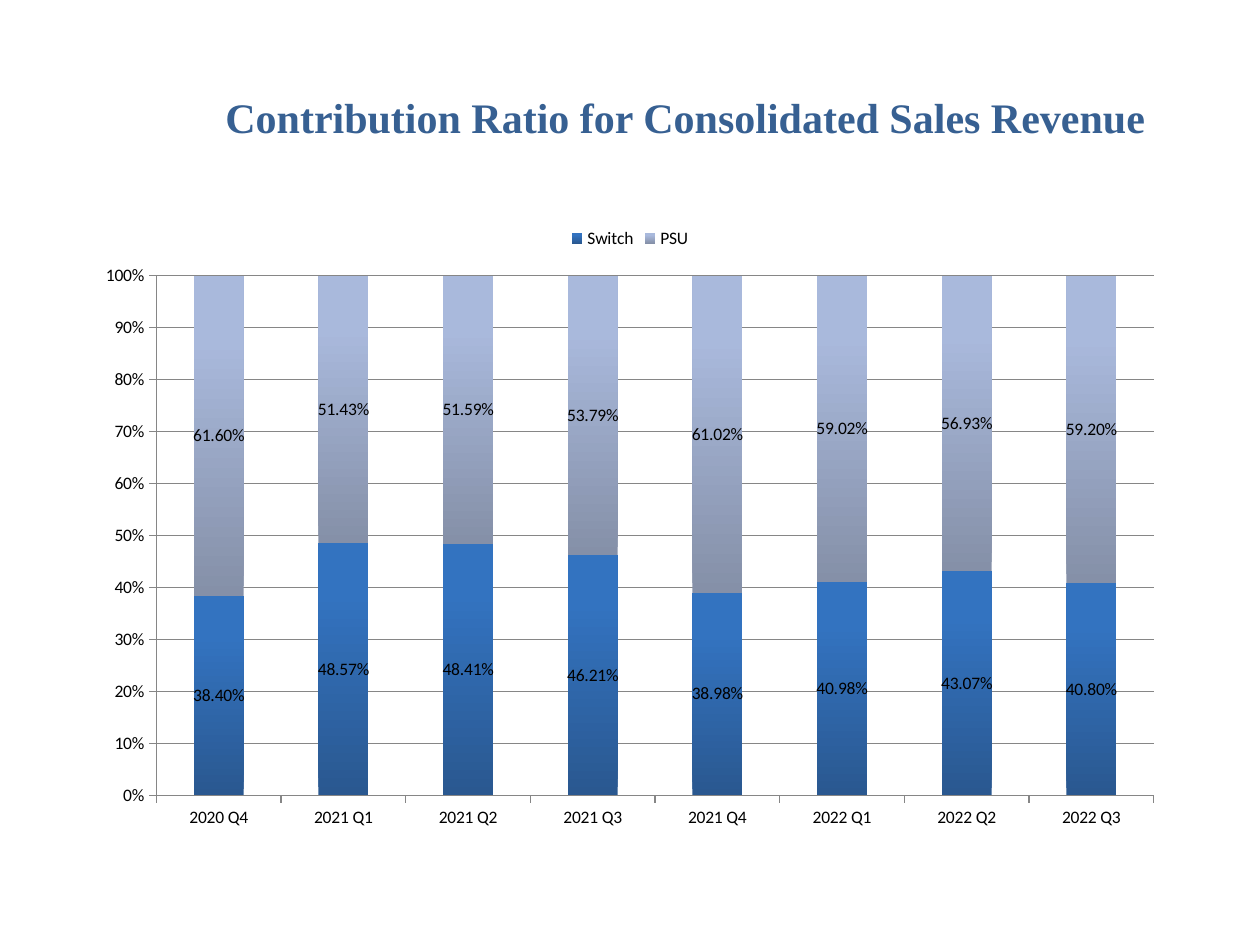
from dataclasses import dataclass

from lxml.etree import SubElement
from pptx import Presentation
from pptx.chart.data import CategoryChartData as Data
from pptx.dml.color import RGBColor as RGB
from pptx.enum.chart import XL_CHART_TYPE as Kind, XL_LABEL_POSITION as Spot
from pptx.enum.chart import XL_LEGEND_POSITION as Side, XL_TICK_MARK as Tick
from pptx.oxml.ns import qn
from pptx.util import Inches, Pt


@dataclass(frozen=True)
class Theme:
    """Colours, fonts and type sizes of the slide."""
    title: str = "376092"
    text: str = "000000"
    line: str = "868686"
    bars: tuple = (("2A5890", "3373C0"), ("8590A8", "A9B9DC"))
    serif: str = "Times New Roman"
    sans: str = "Calibri"
    large: int = 24
    small: int = 10


def assign(item, **values):
    """Set every given attribute on the item."""
    for name, value in values.items():
        setattr(item, name, value)


class Deck:
    """Holds the style and the current slide, and draws its elements."""

    def __init__(self, theme, wide=10, high=7.5):
        self.theme = theme
        self.prs = Presentation()
        self.size = Inches(wide), Inches(high)
        assign(self.prs, slide_width=self.size[0], slide_height=self.size[1])
        self.slide = self.prs.slides.add_slide(self.prs.slide_layouts[6])

    def place(self, *shares):
        """Turn shares of the slide's size into lengths."""
        return [int(share * full) for share, full in zip(shares, self.size * 2)]

    def title(self, words, *shares):
        """Add the heading."""
        frame = self.slide.shapes.add_textbox(*self.place(*shares)).text_frame
        assign(frame, text=words, word_wrap=True)
        font = frame.paragraphs[0].font
        assign(font, name=self.theme.serif, size=Pt(self.theme.large), bold=True)
        font.color.rgb = RGB.from_string(self.theme.title)

    def chart(self, cats, rows, plot, *shares):
        """Add a stacked column chart of shares."""
        data = Data(number_format="0.00%")
        data.categories = cats
        for name, vals in rows.items():
            data.add_series(name, vals)
        chart = self.slide.shapes.add_chart(
            Kind.COLUMN_STACKED, *self.place(*shares), data).chart
        assign(chart, has_title=False, has_legend=True)
        assign(chart.legend, position=Side.TOP, include_in_layout=False)
        assign(chart.font, name=self.theme.sans, size=Pt(self.theme.small))
        chart.font.color.rgb = RGB.from_string(self.theme.text)
        self.axes(chart)
        self.bars(chart.plots[0])
        self.frame(chart, plot)

    def axes(self, chart):
        """Style both axes and the grid."""
        cat, val = chart.category_axis, chart.value_axis
        assign(val, minimum_scale=0, maximum_scale=1, major_unit=0.1,
               has_major_gridlines=True)
        assign(val.tick_labels, number_format="0%", number_format_is_linked=False)
        for axis in (cat, val):
            assign(axis, major_tick_mark=Tick.OUTSIDE, minor_tick_mark=Tick.NONE)
        for part in (cat, val, val.major_gridlines):
            part.format.line.width = Pt(0.75)
            part.format.line.color.rgb = RGB.from_string(self.theme.line)

    def bars(self, plot):
        """Shade the bars from bottom to top and label them."""
        assign(plot, gap_width=150, overlap=100, vary_by_categories=False,
               has_data_labels=True)
        for row, tones in zip(plot.series, self.theme.bars):
            fill = row.format.fill
            fill.gradient()
            fill.gradient_angle = 90
            for stop, tone, spot in zip(fill.gradient_stops, tones, (0, 0.8)):
                stop.color.rgb = RGB.from_string(tone)
                stop.position = spot
            assign(row.data_labels, show_value=True, number_format="0.00%",
                   number_format_is_linked=False, position=Spot.CENTER)

    def frame(self, chart, plot):
        """Fix the inner plot area as shares of the chart."""
        area = chart.plots[0]._element.getparent()
        for old in area.findall(qn("c:layout")):
            area.remove(old)
        layout = SubElement(area, qn("c:layout"))
        area.insert(0, layout)
        manual = SubElement(layout, qn("c:manualLayout"))
        marks = {"layoutTarget": "inner", "xMode": "edge", "yMode": "edge",
                 **dict(zip("xywh", plot))}
        for name, value in marks.items():
            SubElement(manual, qn("c:" + name)).set("val", str(value))


def main():
    """Build and save the slide."""
    deck = Deck(Theme())
    deck.title("Contribution Ratio for Consolidated Sales Revenue",
               0.169, 0.09, 0.756, 0.157)
    cats = ["2020 Q4", *(f"{year} Q{part}" for year, last in ((2021, 4), (2022, 3))
                         for part in range(1, last + 1))]
    switch = [0.384, 0.4857, 0.4841, 0.4621, 0.3898, 0.4098, 0.4307, 0.408]
    rows = {"Switch": switch, "PSU": [round(1 - part, 4) for part in switch]}
    deck.chart(cats, rows, (0.066, 0.098, 0.914, 0.832),
               0.067, 0.227, 0.866, 0.661)
    deck.prs.save("out.pptx")


if __name__ == "__main__":
    main()
